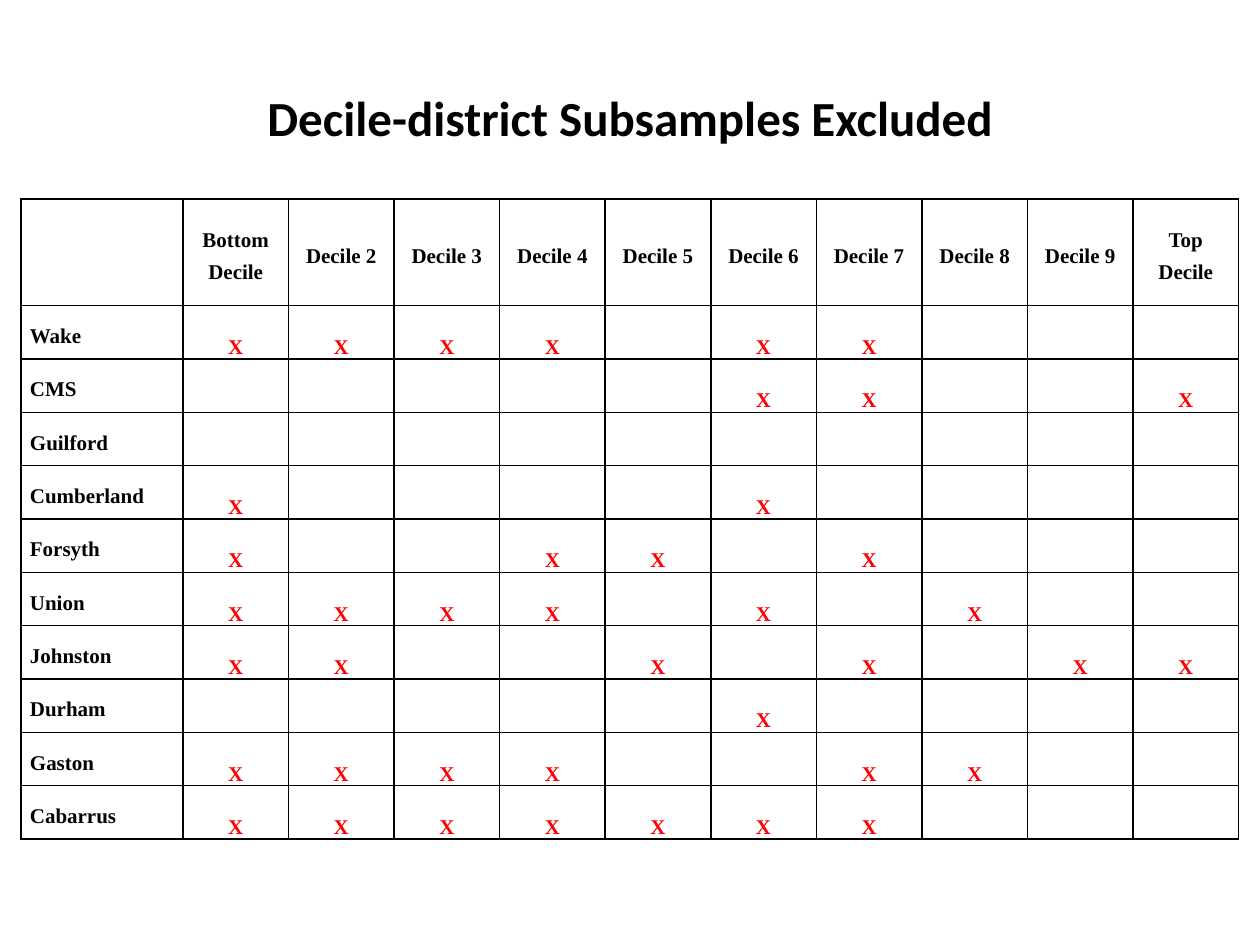
import pptx
import pptx.dml.color
import pptx.enum.text
import pptx.oxml
import pptx.oxml.ns
import pptx.util

PX = 914400 / 126  # EMU in one px
THEME = {
    "text": "000000", "mark": "FF0000", "border": "000000",
    "title_font": "Calibri", "table_font": "Times New Roman",
    "title_size": 28, "table_size": 12, "line_spacing": 18, "border_width": 1,
}
ALIGN = pptx.enum.text.PP_ALIGN
ANCHOR = pptx.enum.text.MSO_ANCHOR

HEADERS = ["", "Bottom Decile", *[f"Decile {n}" for n in range(2, 10)], "Top Decile"]
EXCLUDED_DECILES = {
    "Wake": [1, 2, 3, 4, 6, 7],
    "CMS": [6, 7, 10],
    "Guilford": [],
    "Cumberland": [1, 6],
    "Forsyth": [1, 4, 5, 7],
    "Union": [1, 2, 3, 4, 6, 8],
    "Johnston": [1, 2, 5, 7, 9, 10],
    "Durham": [6],
    "Gaston": [1, 2, 3, 4, 7, 8],
    "Cabarrus": [1, 2, 3, 4, 5, 6, 7],
}


def px(length):
    return pptx.util.Emu(round(length * PX))


def add_run(paragraph, text, font, size, color):
    run = paragraph.add_run()
    run.text = text
    run.font.name = THEME[font]
    run.font.size = pptx.util.Pt(THEME[size])
    run.font.bold = True
    run.font.color.rgb = pptx.dml.color.RGBColor.from_string(THEME[color])


presentation = pptx.Presentation()
presentation.slide_width, presentation.slide_height = px(1260), px(945)
slide = presentation.slides.add_slide(presentation.slide_layouts[6])

# Title
title = slide.shapes.add_textbox(px(63), px(38), px(1134), px(158)).text_frame
title.word_wrap = True
title.vertical_anchor = ANCHOR.MIDDLE
title.paragraphs[0].alignment = ALIGN.CENTER
add_run(title.paragraphs[0], "Decile-district Subsamples Excluded",
        "title_font", "title_size", "text")

# Table grid: a wide name column, and a header two rows high
rows = [HEADERS]
for district, deciles in EXCLUDED_DECILES.items():
    rows.append([district] + ["X" if n in deciles else "" for n in range(1, 11)])

table_width, table_height, name_width = 1218, 640, 162
table = slide.shapes.add_table(len(rows), len(HEADERS), px(21), px(199),
                               px(table_width), px(table_height)).table
table.first_row = table.horz_banding = False
decile_width = (table_width - name_width) / (len(HEADERS) - 1)
row_height = table_height / (len(rows) + 1)
for index, column in enumerate(table.columns):
    column.width = px(decile_width if index else name_width)
for index, row in enumerate(table.rows):
    row.height = px(row_height if index else 2 * row_height)

# Cells
border_width = pptx.util.Pt(THEME["border_width"])
for row_index, texts in enumerate(rows):
    for column_index, text in enumerate(texts):
        cell = table.cell(row_index, column_index)
        is_mark = row_index > 0 and column_index > 0
        cell.margin_left = cell.margin_right = px(9)
        cell.margin_top = cell.margin_bottom = 0
        cell.vertical_anchor = ANCHOR.BOTTOM if is_mark else ANCHOR.MIDDLE
        properties = cell._tc.get_or_add_tcPr()
        for side in "LRTB":
            properties.append(pptx.oxml.parse_xml(
                f'<a:ln{side} {pptx.oxml.ns.nsdecls("a")} w="{border_width}"><a:solidFill>'
                f'<a:srgbClr val="{THEME["border"]}"/></a:solidFill></a:ln{side}>'))
        cell.fill.background()
        if text:
            paragraph = cell.text_frame.paragraphs[0]
            paragraph.alignment = ALIGN.CENTER if column_index else ALIGN.LEFT
            paragraph.line_spacing = pptx.util.Pt(THEME["line_spacing"])
            add_run(paragraph, text, "table_font", "table_size",
                    "mark" if is_mark else "text")

presentation.save("out.pptx")
